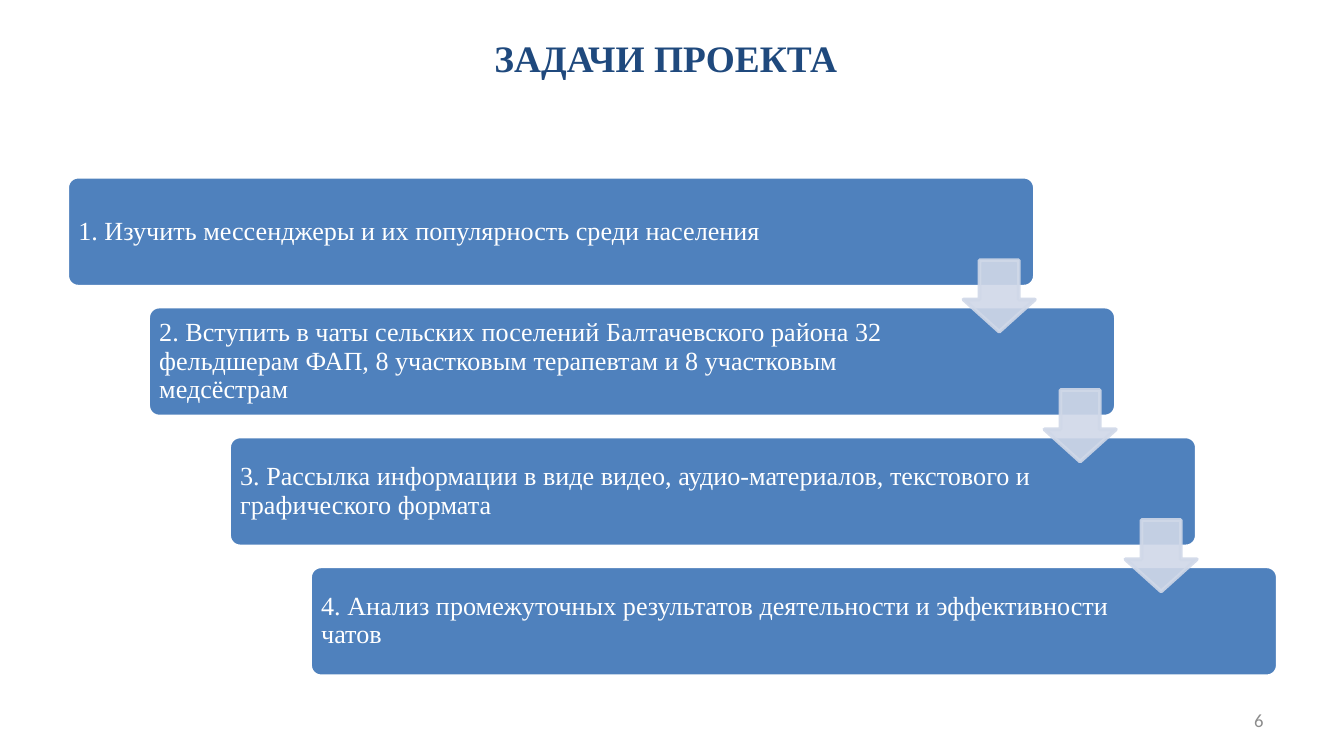
from dataclasses import dataclass

from lxml import etree
from pptx import Presentation
from pptx.dml.color import RGBColor
from pptx.enum.shapes import MSO_SHAPE
from pptx.enum.text import MSO_ANCHOR, MSO_AUTO_SIZE, PP_ALIGN
from pptx.oxml.ns import qn
from pptx.shapes.autoshape import Shape
from pptx.slide import Slide
from pptx.text.text import TextFrame
from pptx.util import Cm, Pt

ROUNDED = MSO_SHAPE.ROUNDED_RECTANGLE
DOWN_ARROW = MSO_SHAPE.DOWN_ARROW
TOP, MIDDLE = MSO_ANCHOR.TOP, MSO_ANCHOR.MIDDLE
LEFT, RIGHT = PP_ALIGN.LEFT, PP_ALIGN.RIGHT
NO_AUTOFIT = MSO_AUTO_SIZE.NONE


@dataclass(frozen=True)
class Theme:
    title: str = "1F497D"
    step: str = "4F81BD"
    arrow: str = "D0D8E8"
    light: str = "FFFFFF"
    number: str = "8C8C8C"
    heading_font: str = "Times New Roman"
    number_font: str = "Calibri"
    title_size: float = 20
    step_size: float = 14
    number_size: float = 10
    line_width: float = 2
    arrow_opacity: int = 90


@dataclass(frozen=True)
class Box:
    left: float
    top: float
    width: float
    height: float

    def shifted(self, across: float, down: float) -> "Box":
        return Box(self.left + across, self.top + down, self.width, self.height)

    def lengths(self) -> tuple[Cm, Cm, Cm, Cm]:
        return Cm(self.left), Cm(self.top), Cm(self.width), Cm(self.height)


THEME = Theme()
TITLE_BOX = Box(9.09, 0.53, 7.32, 1.12)
NUMBER_BOX = Box(18.21, 13.23, 5.92, 0.76)
FIRST_STEP = Box(1.27, 3.34, 18.29, 2.08)
FIRST_ARROW = Box(18.21, 4.92, 1.35, 1.35)
STEP_ACROSS, STEP_DOWN = 1.53, 2.455
STEPS = (
    "1. Изучить мессенджеры и их популярность среди населения",
    "2. Вступить в чаты сельских поселений Балтачевского района 32 "
    "фельдшерам ФАП, 8 участковым терапевтам и 8 участковым медсёстрам",
    "3. Рассылка информации в виде видео, аудио-материалов, текстового "
    "и графического формата",
    "4. Анализ промежуточных результатов деятельности и эффективности чатов",
)


def write_text(
    frame: TextFrame, text: str, font: str, size: float, color: str,
    align: PP_ALIGN, anchor: MSO_ANCHOR, bold: bool = False,
) -> None:
    frame.text = text
    frame.word_wrap = True
    frame.auto_size = NO_AUTOFIT
    frame.vertical_anchor = anchor
    paragraph = frame.paragraphs[0]
    paragraph.alignment = align
    run = paragraph.runs[0]
    run.font.name = font
    run.font.size = Pt(size)
    run.font.bold = bold
    run.font.color.rgb = RGBColor.from_string(color)


def add_shape(
    slide: Slide, kind: MSO_SHAPE, box: Box, fill: str, line: str,
    adjustments: tuple[float, ...],
) -> Shape:
    shape = slide.shapes.add_shape(kind, *box.lengths())
    shape.shadow.inherit = False
    shape.fill.solid()
    shape.fill.fore_color.rgb = RGBColor.from_string(fill)
    shape.line.color.rgb = RGBColor.from_string(line)
    shape.line.width = Pt(THEME.line_width)
    for index, value in enumerate(adjustments):
        shape.adjustments[index] = value
    return shape


def set_opacity(shape: Shape, percent: int) -> None:
    for color in shape._element.spPr.iter(qn("a:srgbClr")):
        etree.SubElement(color, qn("a:alpha")).set("val", str(percent * 1000))


def add_title(slide: Slide) -> None:
    title = slide.shapes.title
    title.left, title.top, title.width, title.height = TITLE_BOX.lengths()
    write_text(title.text_frame, "ЗАДАЧИ ПРОЕКТА", THEME.heading_font,
               THEME.title_size, THEME.title, LEFT, TOP, bold=True)


def add_step(slide: Slide, box: Box, text: str) -> None:
    shape = add_shape(slide, ROUNDED, box, THEME.step, THEME.light, (0.1,))
    frame = shape.text_frame
    write_text(frame, text, THEME.heading_font, THEME.step_size,
               THEME.light, LEFT, MIDDLE)
    frame.margin_left = frame.margin_top = frame.margin_bottom = Cm(0.15)
    frame.margin_right = Cm(3.05)
    frame.paragraphs[0].line_spacing = 0.9


def add_arrow(slide: Slide, box: Box) -> None:
    arrow = add_shape(slide, DOWN_ARROW, box, THEME.arrow, THEME.arrow, (0.55, 0.45))
    set_opacity(arrow, THEME.arrow_opacity)


def add_page_number(slide: Slide) -> None:
    frame = slide.shapes.add_textbox(*NUMBER_BOX.lengths()).text_frame
    write_text(frame, "6", THEME.number_font, THEME.number_size,
               THEME.number, RIGHT, MIDDLE)


def main() -> None:
    presentation = Presentation()
    presentation.slide_width, presentation.slide_height = Cm(25.4), Cm(14.29)
    slide = presentation.slides.add_slide(presentation.slide_layouts[5])
    add_title(slide)
    add_page_number(slide)
    for index, text in enumerate(STEPS):
        add_step(slide, FIRST_STEP.shifted(index * STEP_ACROSS, index * STEP_DOWN), text)
    for index in range(len(STEPS) - 1):
        add_arrow(slide, FIRST_ARROW.shifted(index * STEP_ACROSS, index * STEP_DOWN))
    presentation.save("out.pptx")


if __name__ == "__main__":
    main()
